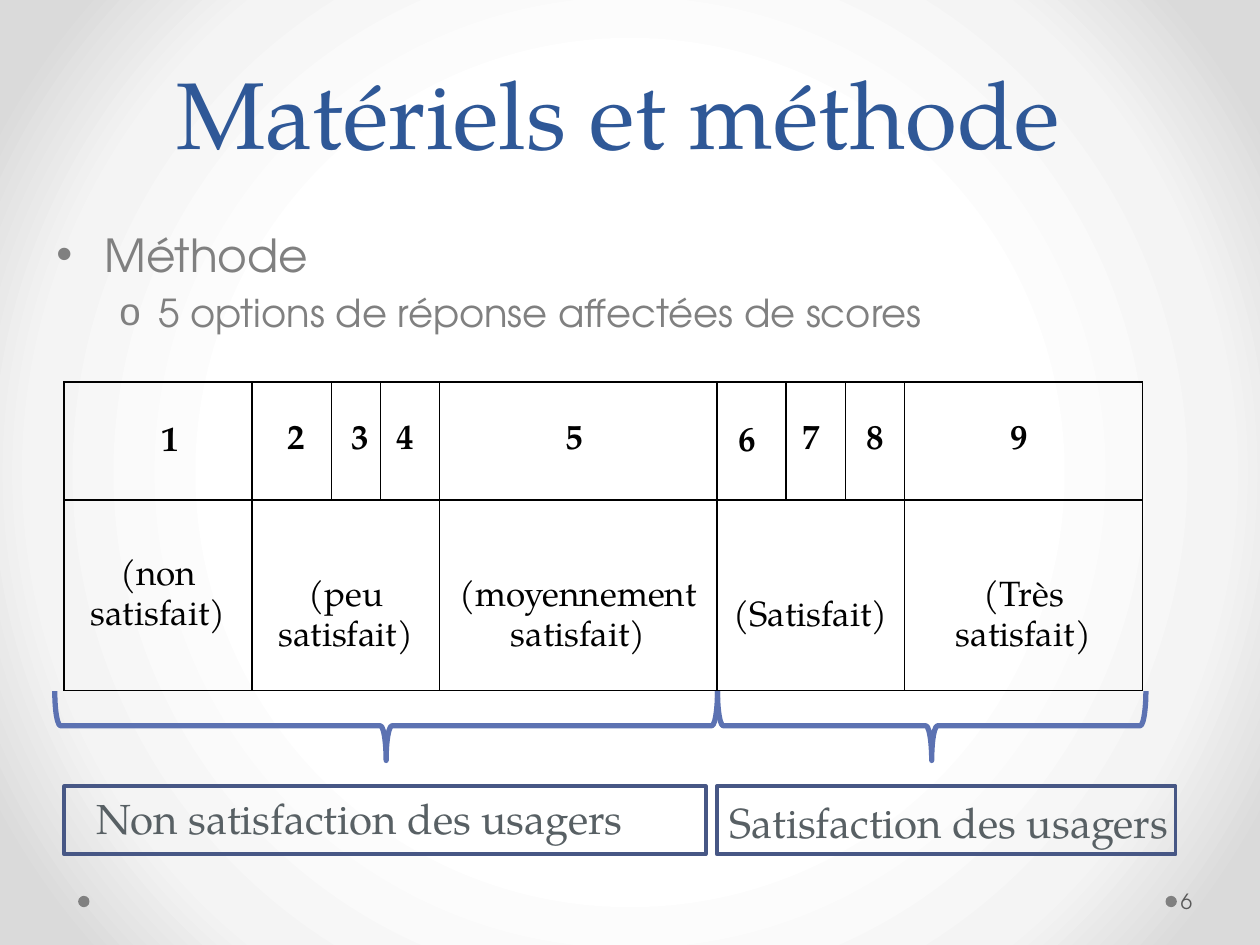
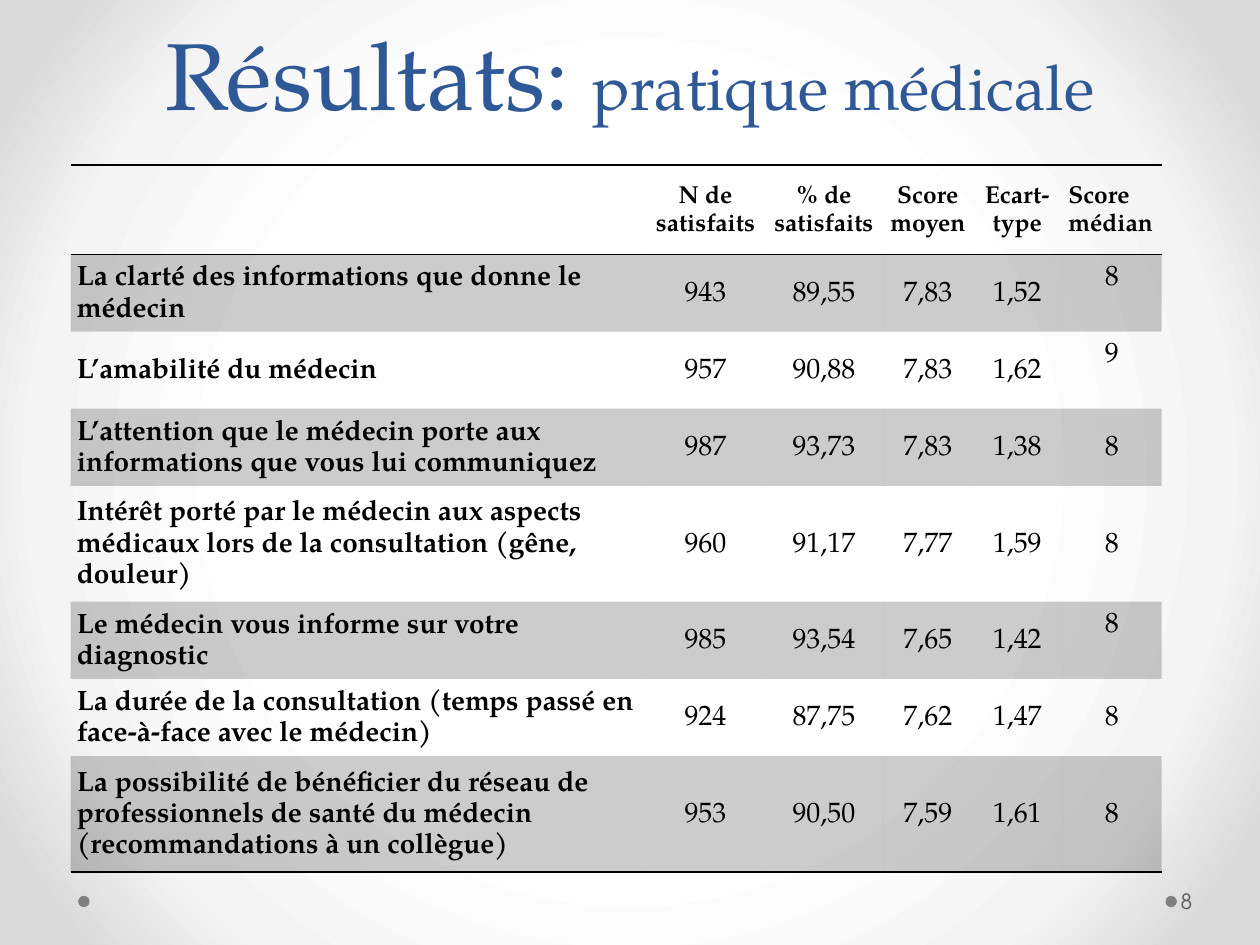
from pptx import Presentation
from pptx.dml.color import RGBColor as Rgb
from pptx.enum.shapes import MSO_SHAPE as Kind
from pptx.enum.text import MSO_ANCHOR as Anchor, PP_ALIGN as Align
from pptx.oxml import parse_xml
from pptx.oxml.ns import nsdecls
from pptx.util import Inches, Pt

HUES = {"title": "2F5897", "gray": "808080", "ink": "000000", "page": "595959",
        "label": "586064", "box": "475785", "brace": "5C72B2"}
SERIF, SANS = "TeX Gyre Pagella", "TeX Gyre Adventor"
GLOW = [(50, "FFFFFF"), (76, "F4F4F4"), (92, "DADADA")]
BARE = "{2D5ABB26-0587-4C30-8999-92F81FD0307C}"
MID = {"vertical_anchor": Anchor.MIDDLE}

TITLES = [[("Matériels et méthode ", 54)],
          [("Résultats: ", 54), ("pratique médicale", 36)]]
SPOTS = [(0.5, 0.16, 9, 1.23), (0.5, 0.21, 9, 0.87)]
PAGES = ["6", "8"]
DOTS = [0.62, 9.25]

POINTS = [("Méthode", 26, "•", 0.38, 0.38), ("5 options de réponse affectées de scores", 22, "o", 0.81, 0.31)]
SCALE = {"spot": (0.51, 3.03), "cols": [1.49, 0.63, 0.39, 0.47, 2.2, 0.55, 0.47, 0.47, 1.89], "rows": [0.94, 1.51]}
SCORES = [("1", 0.2, 0, 1.15), ("2", 0.07, 0, 1), ("3", 0.07, 0, 1),
          ("4", 0, 0.07, 1), ("5", 0, 0.07, 1), ("6", 0, 0.07, 1.15),
          ("7", 0, 0.07, 1), ("8", 0, 0, 1), ("9", 0, 0.07, 1)]
LEVELS = [(0, 1, "(non satisfait)", 0), (1, 3, "(peu satisfait)", 0.33),
          (4, 1, "(moyennement satisfait)", 0.33), (5, 3, "(Satisfait)", 0.33),
          (8, 1, "(Très satisfait)", 0.33)]
BRACES = [(2.79, 3.13, 0.55, 5.26), (7.12, 4.06, 0.55, 3.4)]
GROUPS = [("Non satisfaction des usagers", (0.51, 6.24, 5.09, 0.54), (0.67, 6.24, 4.93, 0.5)),
          ("Satisfaction des usagers", (5.69, 6.24, 3.64, 0.54), (5.69, 6.27, 3.8, 0.5))]

CARE = {"spot": (0.56, 1.31), "cols": [4.57, 0.94, 0.94, 0.71, 0.71, 0.79],
        "rows": [0.71, 0.61, 0.61, 0.61, 0.83, 0.61, 0.61, 0.83]}
HEADS = ["", "N de satisfaits", "% de\nsatisfaits", "Score moyen", "Ecart-type", "Score médian"]
ITEMS = [
    ("La clarté des informations que donne le médecin", "943", "89,55", "7,83", "1,52", "8"),
    ("L’amabilité du médecin", "957", "90,88", "7,83", "1,62", "9"),
    ("L’attention que le médecin porte aux informations que vous lui communiquez",
     "987", "93,73", "7,83", "1,38", "8"),
    ("Intérêt porté par le médecin aux aspects médicaux lors de la consultation (gêne, douleur)",
     "960", "91,17", "7,77", "1,59", "8"),
    ("Le médecin vous informe sur votre diagnostic", "985", "93,54", "7,65", "1,42", "8"),
    ("La durée de la consultation (temps passé en face-à-face avec le médecin)",
     "924", "87,75", "7,62", "1,47", "8"),
    ("La possibilité de bénéficier du réseau de professionnels de santé du médecin "
     "(recommandations à un collègue)", "953", "90,50", "7,59", "1,61", "8")]
RAISED = {1, 2, 5}


def apply(obj, form):
    for name, value in form.items():
        setattr(obj, name, value)


def inch(nums):
    return [Inches(n) for n in nums]


def add_run(para, text, size, hue, face=SERIF, bold=False):
    run = para.add_run()
    run.text = text
    apply(run.font, {"size": Pt(size), "name": face, "bold": bold})
    run.font.color.rgb = Rgb.from_string(HUES[hue])


def add_box(slide, spot, form=None):
    frame = slide.shapes.add_textbox(*inch(spot)).text_frame
    apply(frame, {"word_wrap": True, **(form or {})})
    return frame


def add_form(slide, kind, spot, fill=None, line=None, width=0, turn=0):
    shape = slide.shapes.add_shape(kind, *inch(spot))
    shape.shadow.inherit = False
    shape.rotation = turn
    if fill:
        shape.fill.solid()
        shape.fill.fore_color.rgb = Rgb.from_string(HUES[fill])
    else:
        shape.fill.background()
    if line:
        shape.line.color.rgb = Rgb.from_string(HUES[line])
        shape.line.width = Pt(width)
    else:
        shape.line.fill.background()


def add_grid(slide, plan):
    cols, rows = plan["cols"], plan["rows"]
    size = (sum(cols), sum(rows))
    grid = slide.shapes.add_table(len(rows), len(cols), *inch(plan["spot"] + size)).table
    apply(grid, {"first_row": False, "horz_banding": False})
    grid._tbl.xpath(".//a:tableStyleId")[0].text = BARE
    for col, width in zip(grid.columns, cols):
        col.width = Inches(width)
    for row, height in zip(grid.rows, rows):
        row.height = Inches(height)
    return grid


def set_cell(cell, text, size, bold, align=Align.CENTER, gap=1.15, pads=(0.05, 0, 0.05, 0)):
    sides = ("margin_left", "margin_top", "margin_right", "margin_bottom")
    apply(cell, {**MID, **dict(zip(sides, inch(pads)))})
    for i, part in enumerate(text.split("\n") if text else []):
        para = cell.text_frame.paragraphs[0] if i == 0 else cell.text_frame.add_paragraph()
        apply(para, {"alignment": align, "line_spacing": gap})
        add_run(para, part, size, "ink", bold=bold)


def set_skin(cell, sides, shade=False):
    if shade:
        cell.fill.solid()
        cell.fill.fore_color.rgb = Rgb.from_string(HUES["ink"])
    else:
        cell.fill.background()
    props = cell._tc.get_or_add_tcPr()
    for tint in props.xpath("./a:solidFill/a:srgbClr"):
        tint.append(parse_xml(f'<a:alpha {nsdecls("a")} val="20000"/>'))
    for i, side in enumerate(sides):
        props.insert(i, parse_xml(
            f'<a:ln{side} {nsdecls("a")} w="12700"><a:solidFill>'
            f'<a:srgbClr val="{HUES["ink"]}"/></a:solidFill></a:ln{side}>'))


def set_glow(master):
    master.background.fill.solid()
    stops = "".join(f'<a:gs pos="{pos}000"><a:srgbClr val="{hue}"/></a:gs>' for pos, hue in GLOW)
    props = master.element.xpath(".//p:bgPr")[0]
    props.replace(props[0], parse_xml(
        f'<a:gradFill {nsdecls("a")} rotWithShape="1"><a:gsLst>{stops}</a:gsLst><a:path path="circle">'
        '<a:fillToRect l="50000" t="50000" r="50000" b="50000"/></a:path></a:gradFill>'))


def add_base(deck, index):
    slide = deck.slides.add_slide(deck.slide_layouts[5])
    title = slide.shapes.title
    apply(title, dict(zip(("left", "top", "width", "height"), inch(SPOTS[index]))))
    apply(title.text_frame, {"vertical_anchor": Anchor.BOTTOM, "word_wrap": True})
    para = title.text_frame.paragraphs[0]
    apply(para, {"alignment": Align.CENTER, "line_spacing": Pt(58)})
    for text, size in TITLES[index]:
        add_run(para, text, size, "title")
    for left in DOTS:
        add_form(slide, Kind.OVAL, (left, 7.11, 0.09, 0.09), fill="gray")
    frame = add_box(slide, (9.34, 6.95, 0.61, 0.4),
                    {**MID, "margin_left": Inches(0.03), "margin_right": Inches(0.05)})
    add_run(frame.paragraphs[0], PAGES[index], 12, "page", SANS)
    return slide


def add_points(slide):
    frame = add_box(slide, (0.35, 1.75, 9.37, 1.2))
    for i, (text, size, mark, left, hang) in enumerate(POINTS):
        para = frame.paragraphs[0] if i == 0 else frame.add_paragraph()
        apply(para, {"level": i, "space_before": Pt(size * 0.2)})
        add_run(para, text, size, "gray", SANS)
        props = para._p.get_or_add_pPr()
        props.set("marL", str(Inches(left)))
        props.set("indent", str(-Inches(hang)))
        props.append(parse_xml(f'<a:buFont {nsdecls("a")} typeface="Arial"/>'))
        props.append(parse_xml(f'<a:buChar {nsdecls("a")} char="{mark}"/>'))


def add_method(deck):
    slide = add_base(deck, 0)
    add_points(slide)
    grid = add_grid(slide, SCALE)
    for col, (text, left, right, gap) in enumerate(SCORES):
        set_cell(grid.cell(0, col), text, 20, True, gap=gap, pads=(0.07 + left, 0, 0.07 + right, 0))
    for col, span, text, top in LEVELS:
        cell = grid.cell(1, col)
        if span > 1:
            cell.merge(grid.cell(1, col + span - 1))
        set_cell(cell, text, 20, False, pads=(0.07, top, 0.07, 0))
    for cell in grid.iter_cells():
        set_skin(cell, "LRTB")
    for spot in BRACES:
        add_form(slide, Kind.LEFT_BRACE, spot, line="brace", width=3, turn=270)
    for text, box, spot in GROUPS:
        add_form(slide, Kind.RECTANGLE, box, line="box", width=2.25)
        add_run(add_box(slide, spot).paragraphs[0], text, 24, "label")


def add_results(deck):
    grid = add_grid(add_base(deck, 1), CARE)
    for r, row in enumerate([HEADS, *ITEMS]):
        for c, text in enumerate(row):
            cell = grid.cell(r, c)
            align = Align.LEFT if c == 0 or (r, c) == (0, 5) else Align.CENTER
            lift = 0.25 if c == 5 and r in RAISED else 0
            set_cell(cell, text, 16 if r else 14, r == 0 or c == 0, align, pads=(0.05, 0, 0.05, lift))
            sides = "TB" if r == 0 else "B" if r == len(ITEMS) else ""
            set_skin(cell, sides, r % 2 == 1)


def main():
    deck = Presentation()
    apply(deck, {"slide_width": Inches(10), "slide_height": Inches(7.5)})
    set_glow(deck.slide_master)
    add_method(deck)
    add_results(deck)
    deck.save("out.pptx")


if __name__ == "__main__":
    main()
